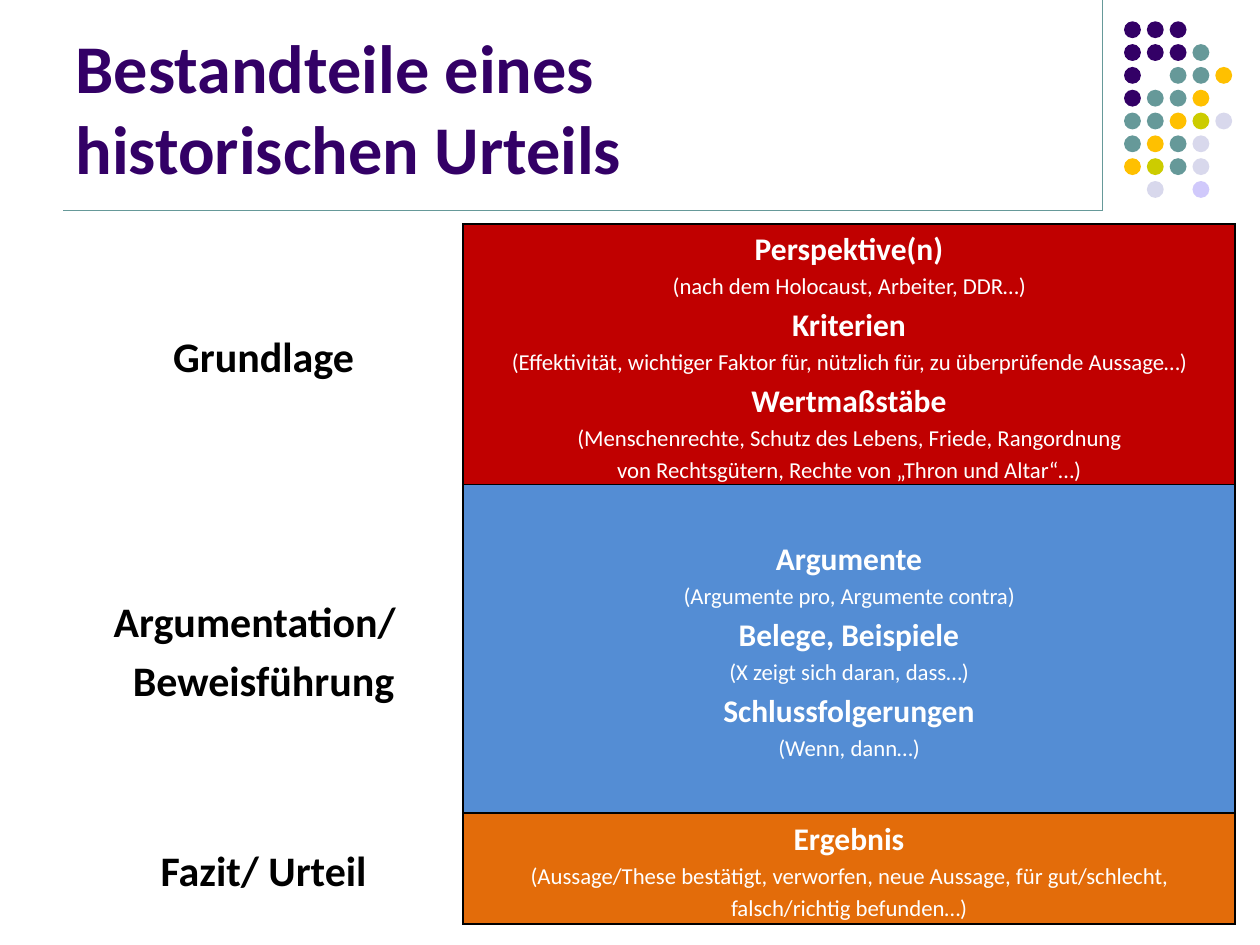
"""Builds the slide on the parts of a historical judgement."""
from lxml.etree import SubElement
from pptx import Presentation
from pptx.dml.color import RGBColor
from pptx.enum.shapes import MSO_CONNECTOR, MSO_SHAPE
from pptx.enum.text import MSO_ANCHOR, MSO_AUTO_SIZE, PP_ALIGN
from pptx.oxml.ns import qn
from pptx.util import Cm, Pt

paint = RGBColor.from_string


def write(para, text, size=13, color="FFFFFF", bold=False,
          align=PP_ALIGN.CENTER, space=1.15, left=0, right=0):
    para.text = text
    para.alignment = align
    para.line_spacing = space
    props = para._p.get_or_add_pPr()
    props.set("marL", str(Cm(left)))
    props.set("marR", str(Cm(right)))
    props.set("indent", "0")
    for run in para.runs:
        run.font.name = "Calibri"
        run.font.size = Pt(size)
        run.font.bold = bold
        run.font.color.rgb = paint(color)


def edge(cell, sides):
    props = cell._tc.get_or_add_tcPr()
    for side in sides:
        line = SubElement(props, qn(f"a:ln{side}"), w=str(Pt(1)))
        fill = SubElement(line, qn("a:solidFill"))
        SubElement(fill, qn("a:srgbClr"), val="000000")


deck = Presentation()
deck.slide_width, deck.slide_height = Cm(25.4), Cm(19.05)
slide = deck.slides.add_slide(deck.slide_layouts[5])
shapes = slide.shapes

for ends in ((22.23, 0, 22.23, 4.24), (1.27, 4.24, 22.23, 4.24)):
    rule = shapes.add_connector(MSO_CONNECTOR.STRAIGHT, *map(Cm, ends))
    rule.line.color.rgb = paint("669999")
    rule.line.width = Pt(0.75)
    SubElement(rule._element.spPr, qn("a:effectLst"))

hues = {"P": "330066", "T": "669999", "Y": "FFC000",
        "G": "CCCC00", "L": "D8D8EC", "V": "D0C9FB"}
dots = ("PPP", "PPPT", "P.TTY", "PTTY", "TTYGL", "TYTL", "YGTL", ".L.V")
for row, marks in enumerate(dots):
    for col, mark in enumerate(marks):
        if mark in hues:
            dot = shapes.add_shape(
                MSO_SHAPE.OVAL, Cm(22.66 + 0.46 * col),
                Cm(0.43 + 0.46 * row), Cm(0.34), Cm(0.34))
            dot.shadow.inherit = False
            dot.fill.solid()
            dot.fill.fore_color.rgb = paint(hues[mark])
            dot.line.fill.background()

title = shapes.title
title.left, title.top = Cm(1.27), Cm(0.33)
title.width, title.height = Cm(20.96), Cm(3.6)
frame = title.text_frame
frame.auto_size = MSO_AUTO_SIZE.NONE
frame.vertical_anchor = MSO_ANCHOR.BOTTOM
write(frame.paragraphs[0], "Bestandteile eines \nhistorischen Urteils", size=39,
      color="330066", bold=True, align=PP_ALIGN.LEFT, space=1.0)

parts = (
    (5.24, "C00000", ("Grundlage",), (
        ("Perspektive(n)", "(nach dem Holocaust, Arbeiter, DDR…)", 0),
        ("Kriterien", "(Effektivität, wichtiger Faktor für, nützlich für, "
         "zu überprüfende Aussage…)", 0),
        ("Wertmaßstäbe", "(Menschenrechte, Schutz des Lebens, Friede, Rangordnung "
         "von Rechtsgütern, Rechte von „Thron und Altar“…)", 1.8))),
    (6.63, "548DD4", ("Argumentation/", "Beweisführung"), (
        ("Argumente", "(Argumente pro, Argumente contra)", 0),
        ("Belege, Beispiele", "(X zeigt sich daran, dass…)", 0),
        ("Schlussfolgerungen", "(Wenn, dann…)", 0))),
    (2.23, "E36C0A", ("Fazit/ Urteil",), (
        ("Ergebnis", "(Aussage/These bestätigt, verworfen, neue Aussage, "
         "für gut/schlecht, falsch/richtig befunden…)", 0),)),
)
table = shapes.add_table(len(parts), 2, Cm(1.3), Cm(4.52), Cm(23.6), Cm(14.1)).table
table.first_row = table.horz_banding = False
table.columns[0].width, table.columns[1].width = Cm(8.03), Cm(15.57)

for row, (height, hue, names, points) in enumerate(parts):
    table.rows[row].height = Cm(height)
    label, box = table.cell(row, 0), table.cell(row, 1)
    edge(label, "R")
    edge(box, "LRTB")
    for cell, fill in ((label, "FFFFFF"), (box, hue)):
        cell.fill.solid()
        cell.fill.fore_color.rgb = paint(fill)
        cell.vertical_anchor = MSO_ANCHOR.MIDDLE
        cell.margin_left = cell.margin_right = Cm(0.13)
        cell.margin_top = cell.margin_bottom = 0
    lines = [(label, name, {"size": 24, "color": "000000", "bold": True,
                            "right": 0.36 if name == "Argumentation/" else 0})
             for name in names]
    for head, note, inset in points:
        lines.append((box, head, {"size": 18, "bold": True}))
        lines.append((box, note, {"left": inset, "right": inset}))
    for cell, text, style in lines:
        frame = cell.text_frame
        para = frame.add_paragraph() if frame.text else frame.paragraphs[0]
        write(para, text, **style)

deck.save("out.pptx")
